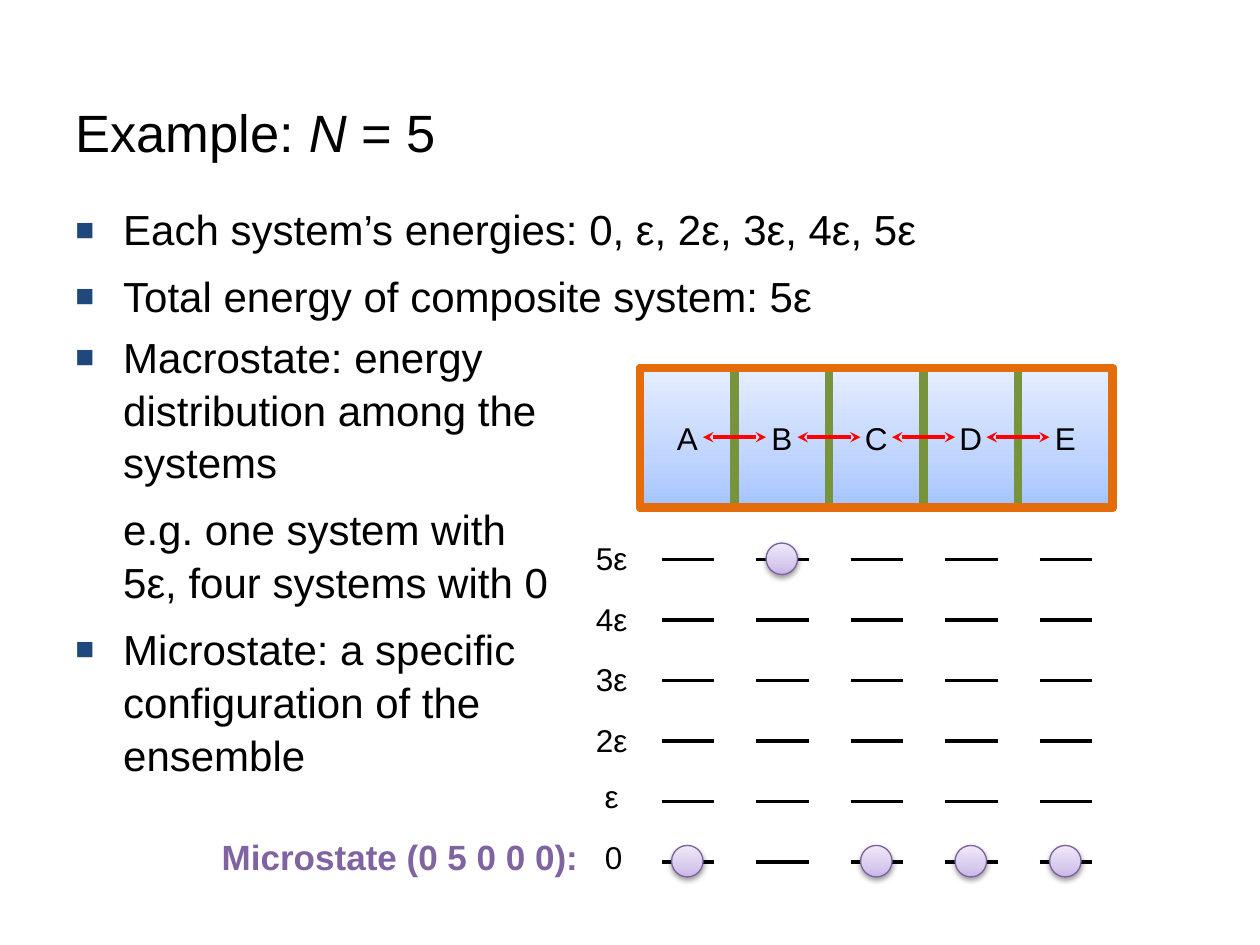
import copy
import pptx
import pptx.dml.color
import pptx.enum.shapes
import pptx.enum.text
import pptx.oxml
import pptx.oxml.ns
import pptx.util
from pptx.util import Inches, Pt

RGB = pptx.dml.color.RGBColor
BLACK = RGB(0x00, 0x00, 0x00)
RED = RGB(0xFF, 0x00, 0x00)
GREEN = RGB(0x77, 0x93, 0x3C)
ORANGE = RGB(0xE4, 0x6C, 0x0A)
PURPLE = RGB(0x80, 0x64, 0xA2)
RIM = RGB(0x7D, 0x60, 0xA0)
NAVY = RGB(0x1F, 0x49, 0x7D)
BLUES = [RGB(0xA4, 0xC4, 0xFF), RGB(0xBF, 0xD4, 0xFF), RGB(0xE6, 0xEE, 0xFF)]
LILACS = [RGB(0xC9, 0xB5, 0xE8), RGB(0xD8, 0xCB, 0xEE), RGB(0xF0, 0xEA, 0xF9)]

NS = 'xmlns:a="http://schemas.openxmlformats.org/drawingml/2006/main"'
SHADOW = (f'<a:effectLst {NS}><a:outerShdw blurRad="39370" dist="20320" dir="5400000" '
          'rotWithShape="0"><a:srgbClr val="000000"><a:alpha val="38000"/></a:srgbClr>'
          '</a:outerShdw></a:effectLst>')
BULLET = [f'<a:buClr {NS}><a:srgbClr val="{NAVY}"/></a:buClr>',
          f'<a:buSzPct {NS} val="75000"/>',
          f'<a:buFont {NS} typeface="Arial"/>',
          f'<a:buChar {NS} char="■"/>']

SHAPE = pptx.enum.shapes.MSO_SHAPE
LINE = pptx.enum.shapes.MSO_CONNECTOR.STRAIGHT
MIDDLE = pptx.enum.text.MSO_ANCHOR.MIDDLE
CENTER = pptx.enum.text.PP_ALIGN.CENTER
GROW = pptx.enum.text.MSO_AUTO_SIZE.SHAPE_TO_FIT_TEXT

deck = pptx.Presentation()
deck.slide_width, deck.slide_height = Inches(10), Inches(7.5)
slide = deck.slides.add_slide(deck.slide_layouts[6])
shapes = slide.shapes


def write(par, text, size, color=BLACK, **extra):
    run = par.add_run()
    run.text = text
    look = {"name": "Arial", "size": Pt(size), **extra}
    for key, value in look.items():
        setattr(run.font, key, value)
    run.font.color.rgb = color


def shade(shape, tones, rim, width):
    """Fill with three tones from the bottom up, and outline."""
    shape.shadow.inherit = False
    fill = shape.fill
    fill.gradient()
    fill.gradient_angle = 90
    first = shape._element.spPr.find(".//" + pptx.oxml.ns.qn("a:gs"))
    first.addnext(copy.deepcopy(first))
    for stop, tone, place in zip(fill.gradient_stops, tones, (0, 0.35, 1)):
        stop.color.rgb = tone
        stop.position = place
    shape.line.color.rgb = rim
    shape.line.width = Pt(width)


# Title
title = shapes.add_textbox(Inches(0.5), Inches(0.5), Inches(8.92), Inches(1.08))
title.text_frame.word_wrap = True
title.text_frame.vertical_anchor = MIDDLE
for text, slant in (("Example: ", False), ("N", True), (" = 5", False)):
    write(title.text_frame.paragraphs[0], text, 30, italic=slant)

# Bullet lists: box, then (text, has bullet)
lists = [
    ((0.5, 1.55, 9.17, 5.25), [
        ("Each system’s energies: 0, ε, 2ε, 3ε, 4ε, 5ε", True),
        ("Total energy of composite system: 5ε", True)]),
    ((0.5, 2.56, 4.13, 3.56), [
        ("Macrostate: energy distribution among the systems", True),
        ("e.g. one system with 5ε, four systems with 0", False),
        ("Microstate: a specific configuration of the ensemble", True)]),
]
for place, items in lists:
    frame = shapes.add_textbox(*map(Inches, place)).text_frame
    frame.word_wrap = True
    for i, (text, dot) in enumerate(items):
        par = frame.add_paragraph() if i else frame.paragraphs[0]
        par.line_spacing = 1.05
        par.space_before = Pt(8 if i else 0)
        props = par._p.get_or_add_pPr()
        props.set("marL", str(Inches(0.38)))
        props.set("indent", str(Inches(-0.38 if dot else 0)))
        if dot:
            for xml in BULLET:
                props.append(pptx.oxml.parse_xml(xml))
        write(par, text, 24)

# Row of five systems inside one frame
LEFT, TOP, STEP, HIGH = 5.08, 2.92, 0.75, 1.11
for i, name in enumerate("ABCDE"):
    cell = shapes.add_shape(SHAPE.RECTANGLE, Inches(LEFT + i * STEP), Inches(TOP),
                            Inches(STEP), Inches(HIGH))
    shade(cell, BLUES, GREEN, 5)
    cell.text_frame.vertical_anchor = MIDDLE
    cell.text_frame.paragraphs[0].alignment = CENTER
    write(cell.text_frame.paragraphs[0], name, 18)

border = shapes.add_shape(SHAPE.RECTANGLE, Inches(LEFT), Inches(TOP),
                          Inches(5 * STEP), Inches(HIGH))
border.shadow.inherit = False
border.fill.background()
border.line.color.rgb = ORANGE
border.line.width = Pt(5)

# Exchange arrows and energy levels
ROW, GAP = 4.44, 0.48
strokes = [(5.58 + i * STEP, 3.47, 0.5, RED) for i in range(4)]
strokes += [(5.25 + i * STEP, ROW + j * GAP, 0.42, BLACK)
            for i in range(5) for j in range(6)]
for x, y, wide, color in strokes:
    stroke = shapes.add_connector(LINE, Inches(x), Inches(y), Inches(x + wide), Inches(y))
    stroke.line.color.rgb = color
    stroke.line.width = Pt(2)
    if color == RED:
        for end in ("headEnd", "tailEnd"):
            stroke.line._get_or_add_ln().append(
                pptx.oxml.parse_xml(f'<a:{end} {NS} type="stealth"/>'))
    stroke._element.spPr.append(pptx.oxml.parse_xml(f"<a:effectLst {NS}/>"))

# Level labels and the microstate caption
notes = [(4.63, 4.23 + j * GAP, 0.45, 0.4, text, 18, BLACK, False)
         for j, text in enumerate(("5ε", "4ε", "3ε", "2ε"))]
notes += [(4.7, 6.12, 0.31, 0.4, "ε", 18, BLACK, False),
          (4.7, 6.6, 0.34, 0.4, "0", 18, BLACK, False),
          (1.65, 6.58, 3.05, 0.44, "Microstate (0 5 0 0 0):", 20, PURPLE, True)]
for x, y, wide, high, text, size, color, bold in notes:
    frame = shapes.add_textbox(Inches(x), Inches(y), Inches(wide), Inches(high)).text_frame
    frame.word_wrap = False
    frame.auto_size = GROW
    frame.paragraphs[0].alignment = CENTER
    write(frame.paragraphs[0], text, size, color, bold=bold)

# One ball per system, set on its energy level
for i, level in enumerate((0, 5, 0, 0, 0)):
    y = ROW + (5 - level) * GAP - 0.13
    ball = shapes.add_shape(SHAPE.OVAL, Inches(5.33 + i * STEP), Inches(y),
                            Inches(0.25), Inches(0.25))
    shade(ball, LILACS, RIM, 0.75)
    props = ball._element.spPr
    props.remove(props.find(pptx.oxml.ns.qn("a:effectLst")))
    props.append(pptx.oxml.parse_xml(SHADOW))

deck.save("out.pptx")
